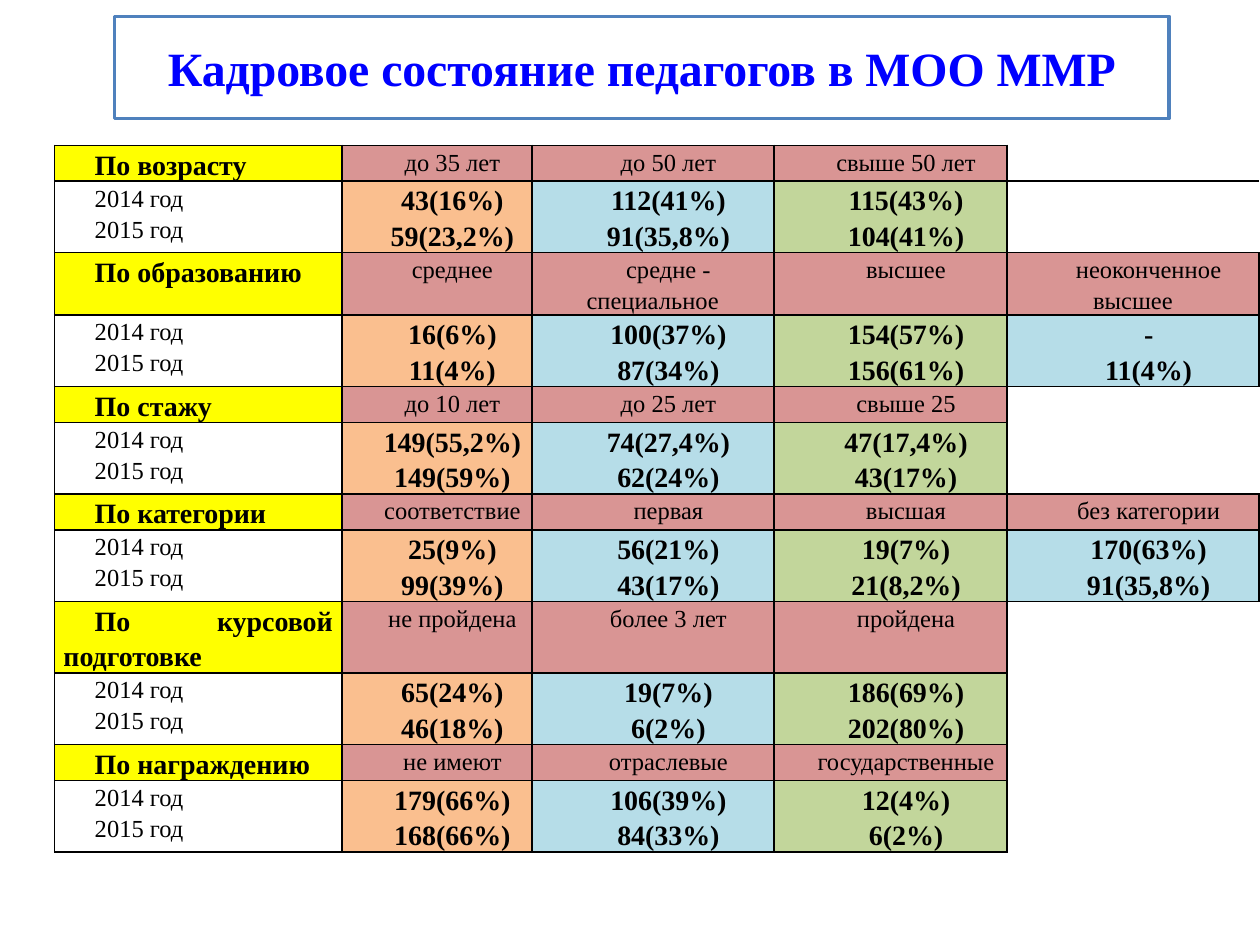
from lxml.etree import SubElement
from pptx import Presentation
from pptx.dml.color import RGBColor as Rgb
from pptx.enum.text import MSO_ANCHOR as Anchor, MSO_AUTO_SIZE as Fit, PP_ALIGN as Align
from pptx.oxml.ns import qn
from pptx.util import Cm, Pt

HUES = {"white": "FFFFFF", "frame": "4F81BD", "title": "0000FF", "ink": "000000",
        "group": "FFFF00", "head": "D99594", "peach": "FABF8F", "sky": "B6DDE8",
        "leaf": "C2D69B"}
FACE = "Times New Roman"
BIG = {"name": FACE, "size": Pt(16), "bold": True}
SMALL = {"name": FACE, "size": Pt(14), "bold": False}
INSETS = {"margin_left": Cm(0.18), "margin_right": Cm(0.18),
          "margin_top": 0, "margin_bottom": 0}
WIDTHS = [5.79, 3.83, 4.88, 4.7, 5.08]
YEARS = ["2014 год", "2015 год"]
TONES = [None, "peach", "sky", "leaf", "sky"]
GROUPS = [
    ("По возрасту", 0.71, [
        ("до 35 лет", "43(16%)", "59(23,2%)"),
        ("до 50 лет", "112(41%)", "91(35,8%)"),
        ("свыше 50 лет", "115(43%)", "104(41%)")]),
    ("По образованию", 1.25, [
        ("среднее", "16(6%)", "11(4%)"),
        ("средне - специальное", "100(37%)", "87(34%)"),
        ("высшее", "154(57%)", "156(61%)"),
        ("неоконченное высшее", "-", "11(4%)")]),
    ("По стажу", 0.71, [
        ("до 10 лет", "149(55,2%)", "149(59%)"),
        ("до 25 лет", "74(27,4%)", "62(24%)"),
        ("свыше 25", "47(17,4%)", "43(17%)")]),
    ("По категории", 0.71, [
        ("соответствие", "25(9%)", "99(39%)"),
        ("первая", "56(21%)", "43(17%)"),
        ("высшая", "19(7%)", "21(8,2%)"),
        ("без категории", "170(63%)", "91(35,8%)")]),
    ("По курсовой подготовке", 1.43, [
        ("не пройдена", "65(24%)", "46(18%)"),
        ("более 3 лет", "19(7%)", "6(2%)"),
        ("пройдена", "186(69%)", "202(80%)")]),
    ("По награждению", 0.71, [
        ("не имеют", "179(66%)", "168(66%)"),
        ("отраслевые", "106(39%)", "84(33%)"),
        ("государственные", "12(4%)", "6(2%)")]),
]


def hue(name):
    """Return the named colour."""
    return Rgb.from_string(HUES[name])


def style(item, looks):
    """Set each attribute in looks on the item."""
    for key, value in looks.items():
        setattr(item, key, value)


def add_title(slide, box, text):
    """Place the framed title in the box."""
    title = slide.shapes.title
    style(title, dict(zip(("left", "top", "width", "height"), map(Cm, box))))
    title.fill.solid()
    title.fill.fore_color.rgb = hue("white")
    title.line.color.rgb = hue("frame")
    title.line.width = Pt(2)
    frame = title.text_frame
    style(frame, {"text": text, "word_wrap": True, "auto_size": Fit.NONE,
                  "vertical_anchor": Anchor.MIDDLE})
    para = frame.paragraphs[0]
    para.alignment = Align.CENTER
    font = para.runs[0].font
    style(font, {"name": FACE, "size": Pt(27.3), "bold": True})
    font.color.rgb = hue("title")


def rule_cell(cell, sides):
    """Draw black borders on the given sides and clear the others."""
    props = cell._tc.get_or_add_tcPr()
    for side in "LRTB":
        line = SubElement(props, qn(f"a:ln{side}"), w=str(Pt(1)))
        if side in sides:
            fill = SubElement(line, qn("a:solidFill"))
            SubElement(fill, qn("a:srgbClr"), val=HUES["ink"])
        else:
            SubElement(line, qn("a:noFill"))


def fill_cell(cell, lines, looks, align, tone=None, sides="LRTB"):
    """Write the lines into a cell with its borders and fill."""
    style(cell, INSETS)
    rule_cell(cell, sides)
    if tone:
        cell.fill.solid()
        cell.fill.fore_color.rgb = hue(tone)
    else:
        cell.fill.background()
    frame = cell.text_frame
    frame.text = "\n".join(lines)
    for para in frame.paragraphs:
        style(para, {"alignment": align, "line_spacing": 1.15})
        props = para._p.get_or_add_pPr()
        props.set("marL", "0")
        props.set("indent", str(Cm(0.63)))
        for run in para.runs:
            style(run.font, looks)
            run.font.color.rgb = hue("ink")
        if not para.runs:
            SubElement(para._p, qn("a:endParaRPr"), sz="1000")


def void_sides(row):
    """Return the borders of an unused last cell in the row."""
    top = row == 1 or row > 1 and len(GROUPS[(row - 1) // 2][2]) == 4
    low = row == 0 or row < 11 and len(GROUPS[(row + 1) // 2][2]) == 4
    return "L" + "T" * top + "B" * low


def add_grid(slide, box):
    """Place the staff table in the box."""
    grid = slide.shapes.add_table(2 * len(GROUPS), len(WIDTHS), *map(Cm, box)).table
    style(grid, {"first_row": False, "horz_banding": False})
    for col, width in zip(grid.columns, WIDTHS):
        col.width = Cm(width)
    for num, (name, height, stats) in enumerate(GROUPS):
        top = 2 * num
        grid.rows[top].height = Cm(height)
        grid.rows[top + 1].height = Cm(1.43)
        fill_cell(grid.cell(top, 0), [name], BIG, Align.JUSTIFY, "group")
        fill_cell(grid.cell(top + 1, 0), YEARS, SMALL, Align.JUSTIFY)
        for col, (head, *pair) in enumerate(stats, 1):
            fill_cell(grid.cell(top, col), [head], SMALL, Align.CENTER, "head")
            fill_cell(grid.cell(top + 1, col), pair, BIG, Align.CENTER, TONES[col])
        if len(stats) < 4:
            for row in (top, top + 1):
                fill_cell(grid.cell(row, 4), [], SMALL, Align.CENTER,
                          sides=void_sides(row))


def main():
    """Build and save the slide."""
    deck = Presentation()
    style(deck, {"slide_width": Cm(25.4), "slide_height": Cm(19.05)})
    slide = deck.slides.add_slide(deck.slide_layouts[5])
    add_title(slide, (2.31, 0.33, 21.26, 2.06), "Кадровое состояние педагогов в МОО ММР")
    add_grid(slide, (1.1, 2.93, 24.28, 14.2))
    deck.save("out.pptx")


if __name__ == "__main__":
    main()
